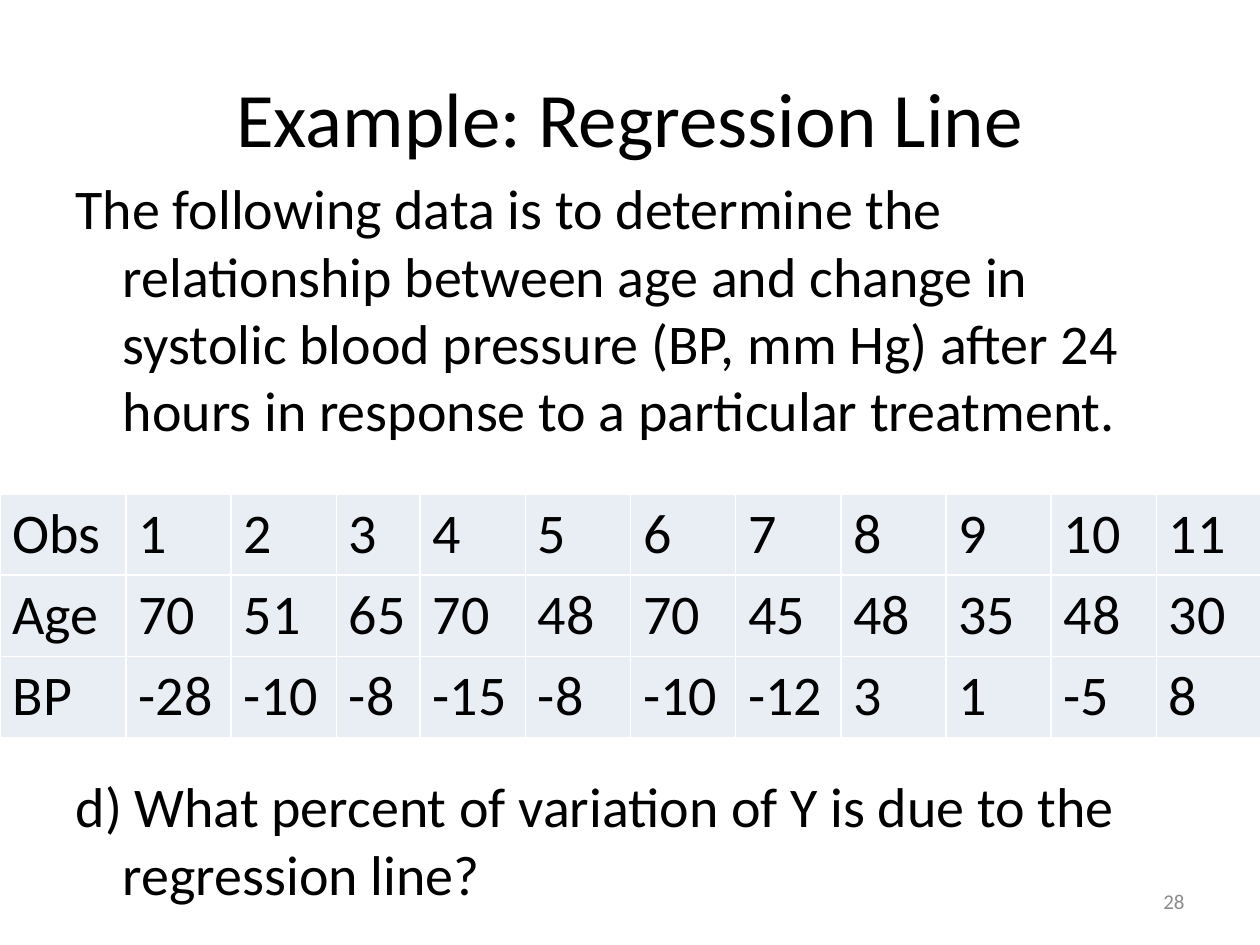
from pptx import Presentation
from pptx.dml.color import RGBColor
from pptx.enum.text import MSO_ANCHOR, MSO_AUTO_SIZE, PP_ALIGN
from pptx.oxml.xmlchemy import OxmlElement
from pptx.util import Cm, Pt

FONT = "Calibri"
BLACK = RGBColor(0x00, 0x00, 0x00)
GREY = RGBColor(0x8C, 0x8C, 0x8C)
CELL_FILL = RGBColor(0xE9, 0xED, 0xF4)

INTRO = ("The following data is to determine the relationship between age and "
         "change in systolic blood pressure (BP, mm Hg) after 24 hours in "
         "response to a particular treatment.")
QUESTION = "d) What percent of variation of Y is due to the regression line?"
DATA = [
    ["Obs", *range(1, 12)],
    ["Age", 70, 51, 65, 70, 48, 70, 45, 48, 35, 48, 30],
    ["BP", -28, -10, -8, -15, -8, -10, -12, 3, 1, -5, 8],
]


def format_runs(p, size, color=BLACK):
    for r in p.runs:
        r.font.name = FONT
        r.font.size = Pt(size)
        r.font.color.rgb = color


def place(sp, left, top, width, height):
    sp.left, sp.top, sp.width, sp.height = map(Cm, (left, top, width, height))


prs = Presentation()
prs.slide_width, prs.slide_height = Cm(25.4), Cm(19.05)
s = prs.slides.add_slide(prs.slide_layouts[1])

# Title
title = s.shapes.title
place(title, 1.27, 0.76, 22.86, 3.18)
tf = title.text_frame
tf.text = "Example: Regression Line"
tf.vertical_anchor = MSO_ANCHOR.MIDDLE
tf.paragraphs[0].alignment = PP_ALIGN.CENTER
format_runs(tf.paragraphs[0], 44)

# Introduction above the table, question below it
body = s.placeholders[1]
place(body, 1.27, 3.38, 22.86, 15.67)
tf = body.text_frame
tf.text = f"{INTRO}\n{QUESTION}"
tf.auto_size = MSO_AUTO_SIZE.NONE
for p, space in zip(tf.paragraphs, (6.4, 188)):
    p.space_before = Pt(space)
    pPr = p._p.get_or_add_pPr()
    pPr.set("marL", str(Cm(0.95)))
    pPr.set("indent", str(Cm(-0.95)))
    pPr.append(OxmlElement("a:buNone"))
    format_runs(p, 32)

# Observations
table = s.shapes.add_table(len(DATA), len(DATA[0]), Cm(0), Cm(9.96),
                           Cm(25.4), Cm(4.89)).table
table.first_row = table.horz_banding = False
for i, col in enumerate(table.columns):
    col.width = Cm({0: 2.54, 3: 1.69}.get(i, 2.12))
for row, values in zip(table.rows, DATA):
    row.height = Cm(1.63)
    for cell, value in zip(row.cells, values):
        cell.text = str(value)
        cell.fill.solid()
        cell.fill.fore_color.rgb = CELL_FILL
        format_runs(cell.text_frame.paragraphs[0], 32)

# Slide number
number = s.shapes.add_textbox(Cm(18.2), Cm(17.66), Cm(5.93), Cm(1.01))
tf = number.text_frame
tf.word_wrap = True
tf.text = "28"
tf.vertical_anchor = MSO_ANCHOR.MIDDLE
tf.paragraphs[0].alignment = PP_ALIGN.RIGHT
format_runs(tf.paragraphs[0], 12, GREY)

prs.save("out.pptx")
